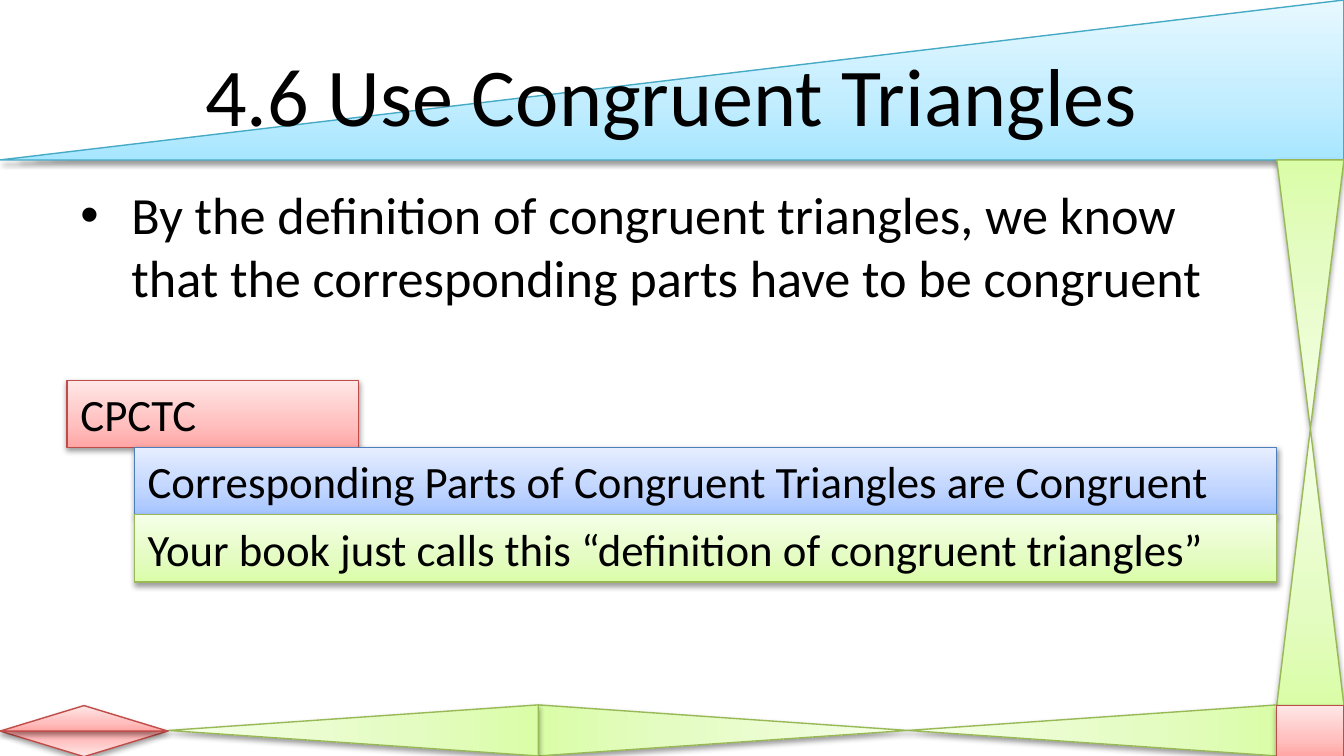
from copy import deepcopy
from dataclasses import dataclass

from lxml import etree
from pptx import Presentation
from pptx.dml.color import RGBColor as RGB
from pptx.enum.shapes import MSO_SHAPE as SHAPE
from pptx.enum.text import MSO_ANCHOR as ANCHOR, PP_ALIGN as ALIGN
from pptx.oxml import parse_xml
from pptx.oxml.ns import nsdecls, qn
from pptx.util import Inches, Pt


@dataclass(frozen=True)
class Theme:
    """Colours (three gradient stops, then outline), font and type sizes."""
    cyan: tuple = ("A7E6FF", "C1EDFF", "E7F8FF", "46AAC5")
    green: tuple = ("DAFDA7", "E4FCC2", "F5FFE7", "98B955")
    red: tuple = ("FFA6A5", "FFC0BF", "FFE7E7", "BF4C48")
    blue: tuple = ("A4C4FF", "BFD4FF", "E6EEFF", "4B7EBC")
    stops: tuple = (0, 0.35, 1)
    text: str = "000000"
    font: str = "Calibri"
    title: int = 44
    body: int = 28
    label: int = 24


THEME = Theme()


def add_shadow(sp):
    """Give a shape a soft shadow just below it."""
    sp.shadow.inherit = False
    sp._element.spPr.find(qn("a:effectLst")).append(parse_xml(
        f'<a:outerShdw {nsdecls("a")} blurRad="{Pt(3.1)}" dist="{Pt(1.6)}" '
        'dir="5400000" rotWithShape="0"><a:srgbClr val="000000">'
        '<a:alpha val="38000"/></a:srgbClr></a:outerShdw>'))


def add_block(s, kind, box, colours, rotation=0, flip=None):
    """Add a gradient shape with an outline and a shadow."""
    sp = s.shapes.add_shape(kind, *map(Inches, box))
    sp.rotation = rotation
    sp_pr = sp._element.spPr
    if flip:
        sp_pr.find(qn("a:xfrm")).set(flip, "1")
    sp.fill.gradient()
    sp.fill.gradient_angle = 90
    gs_lst = sp_pr.find(".//" + qn("a:gsLst"))
    gs_lst.append(deepcopy(gs_lst[0]))
    for stop, position, colour in zip(sp.fill.gradient_stops, THEME.stops, colours):
        stop.position = position
        stop.color.rgb = RGB.from_string(colour)
    sp.line.color.rgb = RGB.from_string(colours[-1])
    sp.line.width = Pt(0.75)
    add_shadow(sp)
    return sp


def add_bullet(p, indent):
    """Give a paragraph a round bullet with a hanging indent."""
    p_pr = p._p.get_or_add_pPr()
    p_pr.set("marL", str(Inches(indent)))
    p_pr.set("indent", str(-Inches(indent)))
    etree.SubElement(p_pr, qn("a:buFont")).set("typeface", "Arial")
    etree.SubElement(p_pr, qn("a:buChar")).set("char", "•")


def write_text(sp, text, size, align=ALIGN.LEFT, anchor=ANCHOR.TOP,
               before=0, bullet_indent=0):
    """Write one formatted paragraph into a shape."""
    tf = sp.text_frame
    tf.word_wrap = True
    tf.vertical_anchor = anchor
    p = tf.paragraphs[0]
    p.alignment = align
    p.space_before = Pt(before)
    if bullet_indent:
        add_bullet(p, bullet_indent)
    r = p.add_run()
    r.text = text
    r.font.name = THEME.font
    r.font.size = Pt(size)
    r.font.color.rgb = RGB.from_string(THEME.text)


def add_text(s, box, text, **style):
    """Add a text box."""
    write_text(s.shapes.add_textbox(*map(Inches, box)), text, **style)


def add_label(s, box, colours, text):
    """Add a coloured rectangle holding one line of text."""
    write_text(add_block(s, SHAPE.RECTANGLE, box, colours), text, size=THEME.label)


def add_border(s):
    """Frame the slide with triangles along the top, right and bottom."""
    triangle, green, red = SHAPE.ISOSCELES_TRIANGLE, THEME.green, THEME.red
    add_block(s, SHAPE.RIGHT_TRIANGLE, (0, 0, 10, 1.19), THEME.cyan, flip="flipH")
    add_block(s, triangle, (9.5, 1.19, 0.5, 2), green, flip="flipV")
    add_block(s, triangle, (9.5, 3.19, 0.5, 2.06), green)
    for i, (rotation, flip) in enumerate([(270, None), (90, "flipH"), (270, None)]):
        box = (7.94 - 2.75 * i, 4.06, 0.38, 2.75)
        add_block(s, triangle, box, green, rotation, flip)
    add_block(s, SHAPE.RECTANGLE, (9.5, 5.25, 0.5, 0.38), red)
    add_block(s, triangle, (0, 5.44, 1.25, 0.19), red, flip="flipV")
    add_block(s, triangle, (0, 5.25, 1.25, 0.19), red)


def main():
    """Build and save the slide."""
    prs = Presentation()
    prs.slide_width = Inches(10)
    prs.slide_height = prs.slide_width * 9 // 16
    s = prs.slides.add_slide(prs.slide_layouts[6])
    add_border(s)
    add_text(s, (0.5, 0.23, 9, 0.94), "4.6 Use Congruent Triangles",
             size=THEME.title, align=ALIGN.CENTER, anchor=ANCHOR.MIDDLE)
    add_text(s, (0.5, 1.31, 9, 3.71),
             "By the definition of congruent triangles, we know that the "
             "corresponding parts have to be congruent",
             size=THEME.body, before=5.6, bullet_indent=0.38)
    labels = [
        (0.5, 2.17, THEME.red, "CPCTC"),
        (1, 8.5, THEME.blue, "Corresponding Parts of Congruent Triangles are Congruent"),
        (1, 8.5, THEME.green, "Your book just calls this “definition of congruent triangles”"),
    ]
    for i, (left, width, colours, text) in enumerate(labels):
        add_label(s, (left, 2.83 + 0.5 * i, width, 0.5), colours, text)
    prs.save("out.pptx")


if __name__ == "__main__":
    main()
